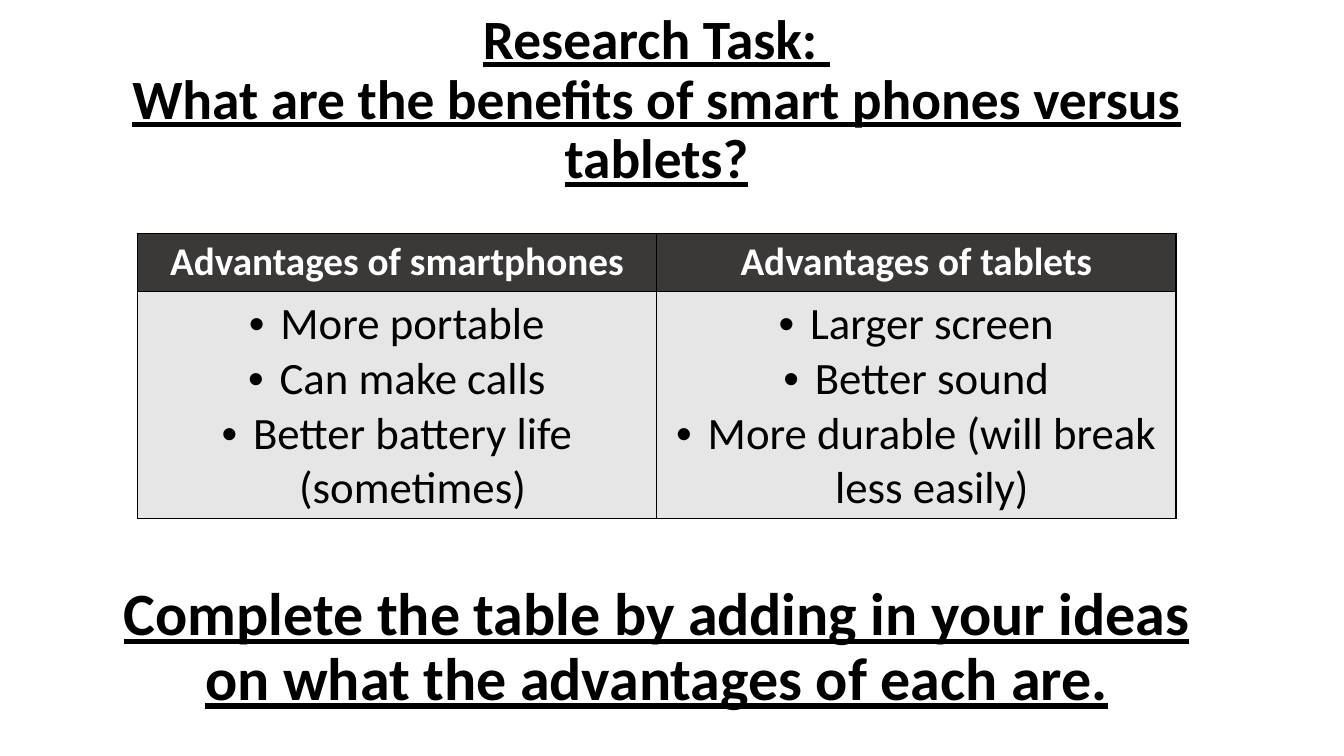
from lxml.etree import SubElement
from pptx import Presentation
from pptx.dml.color import RGBColor
from pptx.enum.text import MSO_ANCHOR, PP_ALIGN
from pptx.oxml.ns import qn
from pptx.util import Pt

# top, font size, lines
HEADINGS = [
    (20, 39.6, ["Research Task: ",
                "What are the benefits of smart phones versus tablets?"]),
    (411, 42.9, ["Complete the table by adding in your ideas "
                 "on what the advantages of each are."]),
]
COLUMNS = {
    "Advantages of smartphones": [
        "More portable", "Can make calls", "Better battery life (sometimes)"],
    "Advantages of tablets": [
        "Larger screen", "Better sound",
        "More durable (will break less easily)"],
}
BLACK, WHITE, DARK, LIGHT = "000000", "FFFFFF", "3B3838", "E7E6E6"
LEFT, TOP, WIDTH, ROWS = 98, 166.5, 371, (42, 162)
INDENT = Pt(22.5)


def color(code):
    return RGBColor.from_string(code)


def style(para, size, code, bold, line=False):
    para.alignment = PP_ALIGN.CENTER
    font = para.font
    font.name, font.size, font.bold = "Calibri", Pt(size), bold
    font.color.rgb = color(code)
    if line:
        font.underline = True


def bullet(para):
    props = para._p.get_or_add_pPr()
    props.set("marL", str(INDENT))
    props.set("indent", str(-INDENT))
    SubElement(props, qn("a:buFont"), typeface="Arial")
    SubElement(props, qn("a:buChar"), char="•")


def paint(cell, code):
    """Draw the cell's borders, then its fill."""
    props = cell._tc.get_or_add_tcPr()
    for side in "LRTB":
        edge = SubElement(props, qn("a:ln" + side), w=str(Pt(1)))
        fill = SubElement(edge, qn("a:solidFill"))
        SubElement(fill, qn("a:srgbClr"), val=BLACK)
    cell.fill.solid()
    cell.fill.fore_color.rgb = color(code)


def heading(slide, top, size, lines):
    box = slide.shapes.add_textbox(Pt(55), Pt(top), Pt(828), Pt(104.4))
    frame = box.text_frame
    frame.word_wrap = True
    frame.vertical_anchor = MSO_ANCHOR.MIDDLE
    para = frame.paragraphs[0]
    for i, line in enumerate(lines):
        if i:
            para.add_line_break()
        para.add_run().text = line
    para.line_spacing = 0.9
    style(para, size, BLACK, True, True)


def grid(slide):
    count = len(COLUMNS)
    table = slide.shapes.add_table(
        len(ROWS), count, Pt(LEFT), Pt(TOP),
        Pt(WIDTH * count), Pt(sum(ROWS))).table
    for row, height in zip(table.rows, ROWS):
        row.height = Pt(height)
    for col, (title, points) in enumerate(COLUMNS.items()):
        table.columns[col].width = Pt(WIDTH)
        head, body = table.cell(0, col), table.cell(1, col)
        paint(head, DARK)
        paint(body, LIGHT)
        head.text = title
        style(head.text_frame.paragraphs[0], 28, WHITE, True)
        body.text = "\n".join(points)
        for para in body.text_frame.paragraphs:
            bullet(para)
            style(para, 32, BLACK, False)


def main():
    deck = Presentation()
    deck.slide_width, deck.slide_height = Pt(960), Pt(540)
    slide = deck.slides.add_slide(deck.slide_layouts[6])
    for item in HEADINGS:
        heading(slide, *item)
    grid(slide)
    deck.save("out.pptx")


if __name__ == "__main__":
    main()
